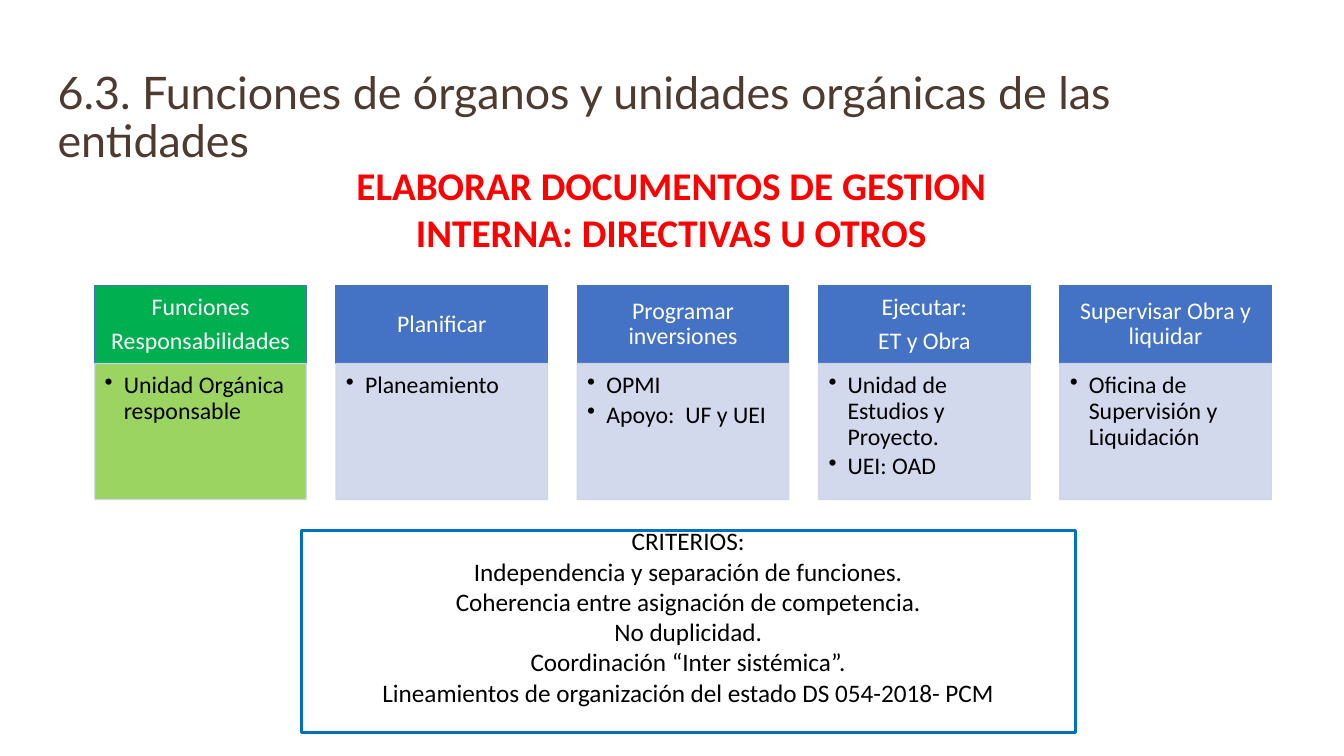
from lxml.etree import SubElement
from pptx import Presentation
from pptx.dml.color import RGBColor
from pptx.enum.shapes import MSO_SHAPE
from pptx.enum.text import MSO_ANCHOR, MSO_AUTO_SIZE, PP_ALIGN
from pptx.oxml.ns import qn
from pptx.util import Cm, Pt

BROWN = RGBColor(0x4E, 0x3A, 0x2F)
RED = RGBColor(0xFF, 0x00, 0x00)
WHITE = RGBColor(0xFF, 0xFF, 0xFF)
BLACK = RGBColor(0x00, 0x00, 0x00)
BLUE = RGBColor(0x44, 0x72, 0xC4)
PALE_BLUE = RGBColor(0xCF, 0xD5, 0xEA)
GREEN = RGBColor(0x00, 0xB0, 0x50)
LIGHT_GREEN = RGBColor(0x92, 0xD0, 0x50)
BORDER_BLUE = RGBColor(0x00, 0x70, 0xC0)

# Header lines, responsible units, header fill, body fill
FUNCTIONS = [
    (["Funciones", "Responsabilidades"], ["Unidad Orgánica responsable"], GREEN, LIGHT_GREEN),
    (["Planificar"], ["Planeamiento"], BLUE, PALE_BLUE),
    (["Programar inversiones"], ["OPMI", "Apoyo:  UF y UEI"], BLUE, PALE_BLUE),
    (["Ejecutar:", "ET y Obra"], ["Unidad de Estudios y Proyecto.", "UEI: OAD"], BLUE, PALE_BLUE),
    (["Supervisar Obra y liquidar"], ["Oficina de Supervisión y Liquidación"], BLUE, PALE_BLUE),
]
CRITERIA = [
    "CRITERIOS:",
    "Independencia y separación de funciones.",
    "Coherencia entre asignación de competencia.",
    "No duplicidad.",
    "Coordinación “Inter sistémica”.",
    "Lineamientos de organización del estado DS 054-2018- PCM",
]


def prepare_frame(shape, margins, anchor):
    frame = shape.text_frame
    frame.word_wrap = True
    frame.auto_size = MSO_AUTO_SIZE.NONE
    frame.vertical_anchor = anchor
    frame.margin_left, frame.margin_top, frame.margin_right, frame.margin_bottom = (
        Cm(margin) for margin in margins)
    return frame


def write_lines(frame, lines, size, color, alignment=PP_ALIGN.CENTER, font="Calibri",
                bold=False, spacing=1.0, after=0, bullet=False):
    for index, line in enumerate(lines):
        paragraph = frame.add_paragraph() if index else frame.paragraphs[0]
        if bullet:
            properties = paragraph._p.get_or_add_pPr()
            properties.set("marL", str(Cm(0.48)))
            properties.set("indent", str(Cm(-0.48)))
            SubElement(properties, qn("a:buChar"), char="•")
        paragraph.alignment = alignment
        paragraph.line_spacing = spacing
        paragraph.space_before = Pt(0)
        paragraph.space_after = Pt(after)
        run = paragraph.add_run()
        run.text = line
        run.font.name = font
        run.font.size = Pt(size)
        run.font.bold = bold
        run.font.color.rgb = color


def add_rectangle(slide, box, fill, line, line_width=1.0):
    shape = slide.shapes.add_shape(MSO_SHAPE.RECTANGLE, *(Cm(length) for length in box))
    shape.shadow.inherit = False
    shape.fill.solid()
    shape.fill.fore_color.rgb = fill
    shape.line.color.rgb = line
    shape.line.width = Pt(line_width)
    return shape


def make_translucent(shape, percent):
    for color in shape._element.spPr.iter(qn("a:srgbClr")):
        SubElement(color, qn("a:alpha"), val=str(percent * 1000))


def add_title(slide, box):
    title = slide.shapes.title
    title.left, title.top, title.width, title.height = (Cm(length) for length in box)
    frame = prepare_frame(title, (0, 0, 0, 0), MSO_ANCHOR.MIDDLE)
    write_lines(frame, ["6.3. Funciones de órganos y unidades orgánicas de las entidades"],
                32, BROWN, PP_ALIGN.LEFT, "Lato", spacing=0.9)


def add_function_columns(slide, box):
    left, top, width, height = box
    gap = 0.75
    column_width = (width - gap * (len(FUNCTIONS) - 1)) / len(FUNCTIONS)
    header_height = 1.97
    for index, (header_lines, units, header_fill, body_fill) in enumerate(FUNCTIONS):
        column_left = left + index * (column_width + gap)

        # Function name
        header = add_rectangle(slide, (column_left, top, column_width, header_height),
                               header_fill, BLUE)
        frame = prepare_frame(header, (0.33, 0.2, 0.33, 0.2), MSO_ANCHOR.MIDDLE)
        write_lines(frame, header_lines, 17, WHITE, spacing=0.9, after=6)

        # Responsible units
        body = add_rectangle(slide, (column_left, top + header_height, column_width,
                                     height - header_height), body_fill, PALE_BLUE)
        make_translucent(body, 90)
        frame = prepare_frame(body, (0.25, 0.25, 0.33, 0.38), MSO_ANCHOR.TOP)
        write_lines(frame, units, 17, BLACK, PP_ALIGN.LEFT, spacing=0.9, after=2.5, bullet=True)


def add_directive(slide, box):
    text_box = slide.shapes.add_textbox(*(Cm(length) for length in box))
    frame = prepare_frame(text_box, (0.25, 0.13, 0.25, 0.13), MSO_ANCHOR.TOP)
    write_lines(frame, ["ELABORAR DOCUMENTOS DE GESTION INTERNA: DIRECTIVAS U OTROS"],
                28, RED, bold=True)


def add_criteria(slide, box):
    panel = add_rectangle(slide, box, WHITE, BORDER_BLUE, 2.25)
    frame = prepare_frame(panel, (0.25, 0, 0.25, 0.76), MSO_ANCHOR.MIDDLE)
    write_lines(frame, CRITERIA, 18, BLACK)


def main():
    presentation = Presentation()
    presentation.slide_width = Cm(33.87)
    presentation.slide_height = Cm(19.05)
    slide = presentation.slides.add_slide(presentation.slide_layouts[5])
    add_title(slide, (1.45, 1.63, 31.55, 2.74))
    add_function_columns(slide, (2.39, 7.19, 29.65, 5.4))
    add_directive(slide, (8.38, 3.94, 17.07, 2.64))
    add_criteria(slide, (7.59, 13.36, 19.51, 5.11))
    presentation.save("out.pptx")


if __name__ == "__main__":
    main()
